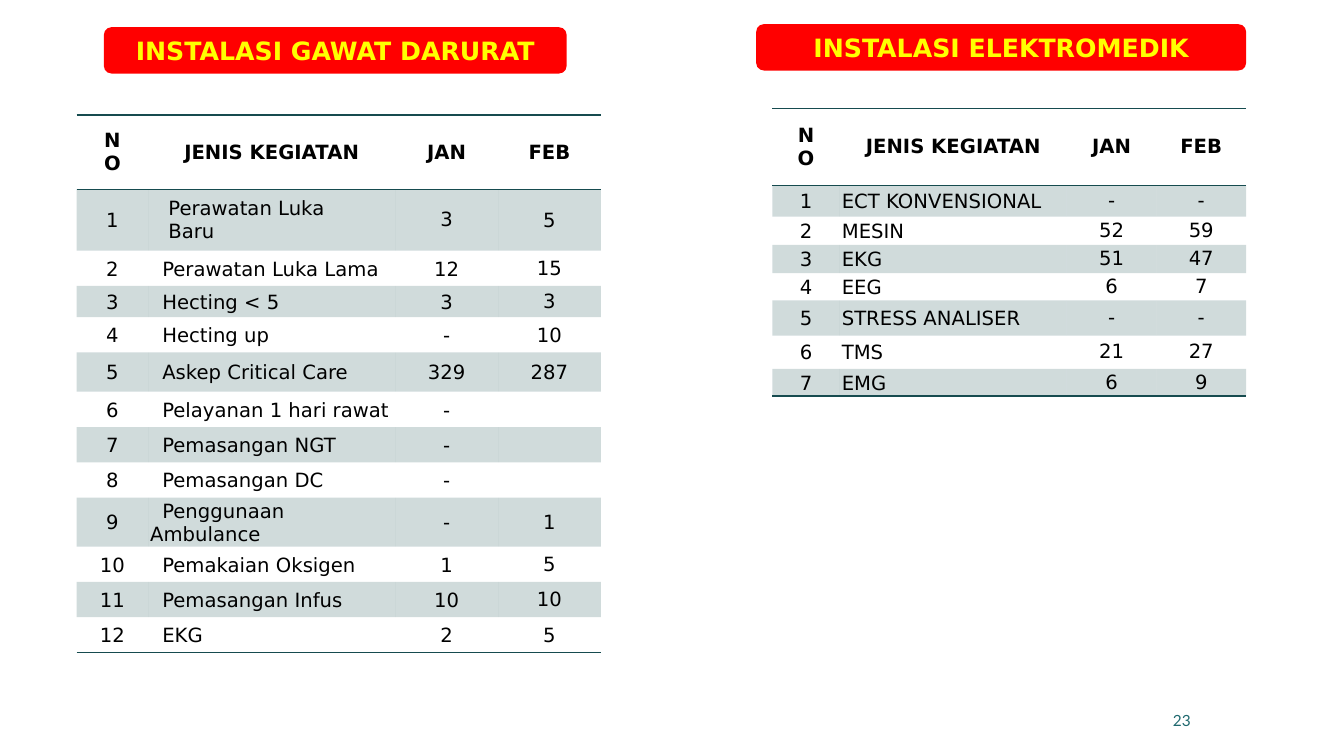
from lxml import etree
from pptx import Presentation
from pptx.dml.color import RGBColor
from pptx.enum import shapes, text
from pptx.oxml import ns
from pptx.util import Inches, Pt

TEAL = "164B4F"
CENTER = text.PP_ALIGN.CENTER
NO_GRID = "{2D5ABB26-0587-4C30-8999-92F81FD0307C}"
HEADINGS = ("NO", "JENIS KEGIATAN", "JAN", "FEB")

EMERGENCY = [
    (0.43, "Perawatan Luka Baru", "3", "5"),
    (0.35, "Perawatan Luka Lama", "12", "15"),
    (0.31, "Hecting < 5", "3", "3"),
    (0.35, "Hecting up", "-", "10"),
    (0.39, "Askep Critical Care", "329", "287"),
    (0.35, "Pelayanan 1 hari rawat", "-", ""),
    (0.35, "Pemasangan NGT", "-", ""),
    (0.35, "Pemasangan DC", "-", ""),
    (0.35, "Penggunaan Ambulance", "-", "1"),
    (0.35, "Pemakaian Oksigen", "1", "5"),
    (0.35, "Pemasangan Infus", "10", "10"),
    (0.35, "EKG", "2", "5"),
]
ELECTROMEDICAL = [
    (0.31, "ECT KONVENSIONAL", "-", "-"),
    (0.28, "MESIN", "52", "59"),
    (0.28, "EKG", "51", "47"),
    (0.27, "EEG", "6", "7"),
    (0.35, "STRESS ANALISER", "-", "-"),
    (0.33, "TMS", "21", "27"),
    (0.27, "EMG", "6", "9"),
]


def color(value):
    return RGBColor.from_string(value)


def write(frame, words, size=14, font="DejaVu Sans", ink="000000",
          bold=False, align=CENTER, indent=0):
    paragraph = frame.paragraphs[0]
    paragraph.alignment = align
    if indent:
        paragraph._p.get_or_add_pPr().set("indent", str(Inches(indent)))
    if words:
        run = paragraph.add_run()
        run.text = words
        run.font.size = Pt(size)
        run.font.name = font
        run.font.bold = bold
        run.font.color.rgb = color(ink)


def add_title(slide, left, top, width, words):
    banner = slide.shapes.add_shape(
        shapes.MSO_SHAPE.ROUNDED_RECTANGLE,
        Inches(left), Inches(top), Inches(width), Inches(0.46))
    banner.shadow.inherit = False
    banner.fill.solid()
    banner.fill.fore_color.rgb = color("FF0000")
    banner.line.fill.background()
    banner.text_frame.vertical_anchor = text.MSO_ANCHOR.MIDDLE
    write(banner.text_frame, words, size=18, ink="FFFF00", bold=True)


def add_border(cell, side):
    line = etree.SubElement(cell._tc.get_or_add_tcPr(), ns.qn(f"a:{side}"),
                            w=str(Pt(1)))
    fill = etree.SubElement(line, ns.qn("a:solidFill"))
    etree.SubElement(fill, ns.qn("a:srgbClr"), val=TEAL)


def tint(cell, shaded):
    if not shaded:
        cell.fill.background()
        return
    cell.fill.solid()
    cell.fill.fore_color.rgb = color(TEAL)
    tone = cell._tc.tcPr.find(f"{ns.qn('a:solidFill')}/{ns.qn('a:srgbClr')}")
    etree.SubElement(tone, ns.qn("a:alpha"), val="20000")


def pad(cell, side, top, bottom):
    cell.margin_left = cell.margin_right = Inches(side)
    cell.margin_top = Inches(top)
    cell.margin_bottom = Inches(bottom)


def add_activities(slide, left, top, widths, header_height, activities,
                   header_pad, count_pads, indent=0, roomy=()):
    heights = [header_height] + [height for height, *_ in activities]
    rows = [HEADINGS] + [(str(number), *values) for number, (_, *values)
                         in enumerate(activities, 1)]
    table = slide.shapes.add_table(
        len(rows), len(widths), Inches(left), Inches(top),
        Inches(sum(widths)), Inches(sum(heights))).table
    table.horz_banding = False
    table._tbl.tblPr.find(ns.qn("a:tableStyleId")).text = NO_GRID
    for column, width in zip(table.columns, widths):
        column.width = Inches(width)
    pads = (0.02, 0.02, *count_pads)
    for r, (values, height) in enumerate(zip(rows, heights)):
        table.rows[r].height = Inches(height)
        header = r == 0
        for c, words in enumerate(values):
            cell = table.cell(r, c)
            cell.vertical_anchor = text.MSO_ANCHOR.MIDDLE
            wide = header or (r, c) in roomy
            if wide:
                pad(cell, 0.2, header_pad, header_pad)
            else:
                pad(cell, pads[c], pads[c], 0)
            if header:
                add_border(cell, "lnT")
            if header or r == len(activities):
                add_border(cell, "lnB")
            tint(cell, r % 2 == 1)
            activity = c == 1 and not header
            write(cell.text_frame, words, bold=header,
                  align=text.PP_ALIGN.LEFT if activity else CENTER,
                  indent=indent if activity and not wide else 0)


def add_page_number(slide, number):
    box = slide.shapes.add_textbox(Inches(8.8), Inches(6.95),
                                   Inches(3.11), Inches(0.4))
    box.text_frame.word_wrap = True
    box.text_frame.vertical_anchor = text.MSO_ANCHOR.MIDDLE
    write(box.text_frame, number, size=11, font="Lato", ink="1F696F",
          align=text.PP_ALIGN.RIGHT)


def main():
    deck = Presentation()
    deck.slide_width = Inches(13.33)
    deck.slide_height = Inches(7.5)
    slide = deck.slides.add_slide(deck.slide_layouts[6])
    add_page_number(slide, "23")
    add_title(slide, 1.03, 0.27, 4.59, "INSTALASI GAWAT DARURAT")
    add_title(slide, 7.5, 0.24, 4.86, "INSTALASI ELEKTROMEDIK")
    add_activities(slide, 0.76, 1.14, (0.71, 2.45, 1.02, 1.02), 0.74,
                   EMERGENCY, header_pad=0.07, count_pads=(0.02, 0.01),
                   indent=0.12, roomy=((1, 1), (1, 2)))
    add_activities(slide, 7.66, 1.08, (0.67, 2.25, 0.89, 0.89), 0.76,
                   ELECTROMEDICAL, header_pad=0.08, count_pads=(0, 0))
    deck.save("out.pptx")


if __name__ == "__main__":
    main()
